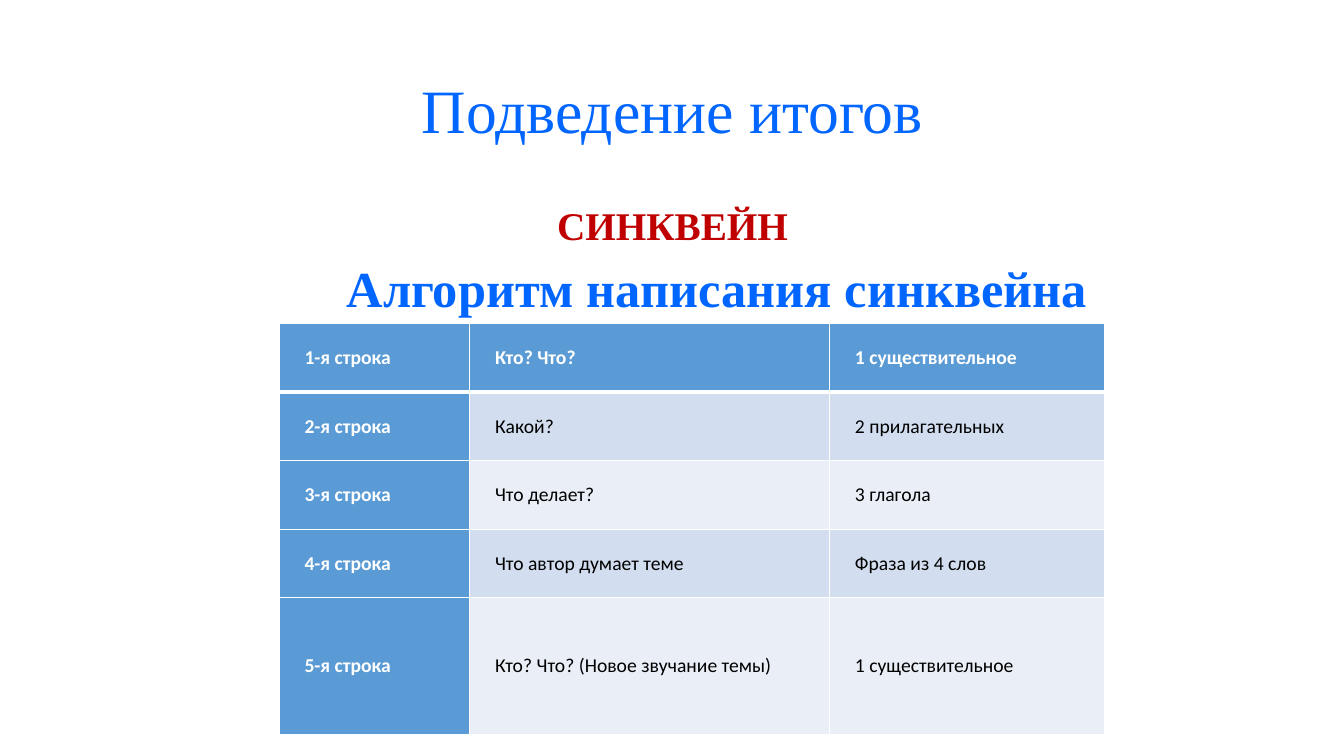
from lxml import etree
from pptx import Presentation
from pptx import util as u
from pptx.dml import color
from pptx.enum import text
from pptx.oxml import ns

HUES = {"blue": "0066FF", "red": "C00000", "head": "5B9BD5", "band": "D2DEEF",
        "pale": "EAEFF7", "white": "FFFFFF", "black": "000000"}
SERIF = "Times New Roman"
COLS = [1.89, 3.57, 2.73]
ROWS = [0.68, 0.68, 0.68, 0.68, 1.36]
STEPS = [
    ("1-я строка", "Кто? Что?", "1 существительное"),
    ("2-я строка", "Какой?", "2 прилагательных"),
    ("3-я строка", "Что делает?", "3 глагола"),
    ("4-я строка", "Что автор думает теме", "Фраза из 4 слов"),
    ("5-я строка", "Кто? Что? (Новое звучание темы)", "1 существительное"),
]


def rgb(hue):
    return color.RGBColor.from_string(HUES[hue])


def place(shape, box):
    shape.left, shape.top, shape.width, shape.height = map(u.Inches, box)


def indent(para, left, first):
    props = para._p.get_or_add_pPr()
    props.set("marL", str(u.Inches(left)))
    props.set("indent", str(u.Inches(first)))
    return props


def style(para, name, size, hue, bold=False):
    font = para.font
    font.name, font.size, font.bold = name, u.Pt(size), bold
    font.color.rgb = rgb(hue)


def border(cell, sides):
    """Draw white cell borders; sides maps a tag to a width in points."""
    props = cell._tc.get_or_add_tcPr()
    for tag, width in sides.items():
        line = etree.SubElement(props, ns.qn("a:" + tag), w=str(u.Pt(width)))
        fill = etree.SubElement(line, ns.qn("a:solidFill"))
        etree.SubElement(fill, ns.qn("a:srgbClr"), val=HUES["white"])


# Title and red heading in the template's placeholders
def add_title(slide, box):
    title = slide.shapes.title
    place(title, box)
    frame = title.text_frame
    frame.text = "Подведение итогов"
    frame.vertical_anchor = text.MSO_ANCHOR.MIDDLE
    para = frame.paragraphs[0]
    para.alignment, para.line_spacing = text.PP_ALIGN.CENTER, 0.9
    style(para, SERIF, 44, "blue")


def add_body(slide, box):
    body = slide.placeholders[1]
    place(body, box)
    body.text_frame.text = "СИНКВЕЙН"
    para = body.text_frame.paragraphs[0]
    para.alignment, para.line_spacing = text.PP_ALIGN.CENTER, 0.9
    para.space_before = u.Pt(0)
    etree.SubElement(indent(para, 0, 0), ns.qn("a:buNone"))
    style(para, SERIF, 28, "red", True)


# Table of the five lines
def fill_cell(cell, words, row, col):
    top, side = row == 0, col == 0
    sides = {"lnL": 1, "lnR": 1, "lnT": 3 if row == 1 else 1, "lnB": 3 if top else 1}
    border(cell, sides)
    cell.fill.solid()
    cell.fill.fore_color.rgb = rgb("head" if top or side else "band" if row % 2 else "pale")
    cell.margin_left = cell.margin_right = cell.margin_top = cell.margin_bottom = 0
    cell.vertical_anchor = text.MSO_ANCHOR.MIDDLE
    cell.text = words
    para = cell.text_frame.paragraphs[0]
    para.alignment = text.PP_ALIGN.JUSTIFY
    para.space_before, para.space_after = u.Pt(0), u.Pt(7.5)
    para.space_before = u.Pt(7.5)
    indent(para, 0.1, 0.15)
    style(para, "Calibri", 14, "white" if top or side else "black", top or side)


def add_steps(slide, left, top):
    size = map(u.Inches, (left, top, sum(COLS), sum(ROWS)))
    table = slide.shapes.add_table(len(ROWS), len(COLS), *size).table
    for col, width in zip(table.columns, COLS):
        col.width = u.Inches(width)
    for row, height in zip(table.rows, ROWS):
        row.height = u.Inches(height)
    for row, step in enumerate(STEPS):
        for col, words in enumerate(step):
            fill_cell(table.cell(row, col), words, row, col)


# Blue caption above the table
def add_label(slide, box):
    frame = slide.shapes.add_textbox(*map(u.Inches, box)).text_frame
    frame.word_wrap = False
    frame.auto_size = text.MSO_AUTO_SIZE.SHAPE_TO_FIT_TEXT
    frame.vertical_anchor = text.MSO_ANCHOR.MIDDLE
    frame.text = "Алгоритм написания синквейна"
    para = frame.paragraphs[0]
    indent(para, 0, 0.15)
    style(para, SERIF, 36, "blue", True)


def main():
    deck = Presentation()
    deck.slide_width, deck.slide_height = u.Inches(13.33), u.Inches(7.5)
    slide = deck.slides.add_slide(deck.slide_layouts[1])
    add_title(slide, (0.92, 0.4, 11.5, 1.45))
    add_body(slide, (0.92, 2, 11.5, 4.76))
    add_steps(slide, 2.77, 3.21)
    add_label(slide, (3.19, 2.5, 7.77, 0.71))
    deck.save("out.pptx")


if __name__ == "__main__":
    main()
